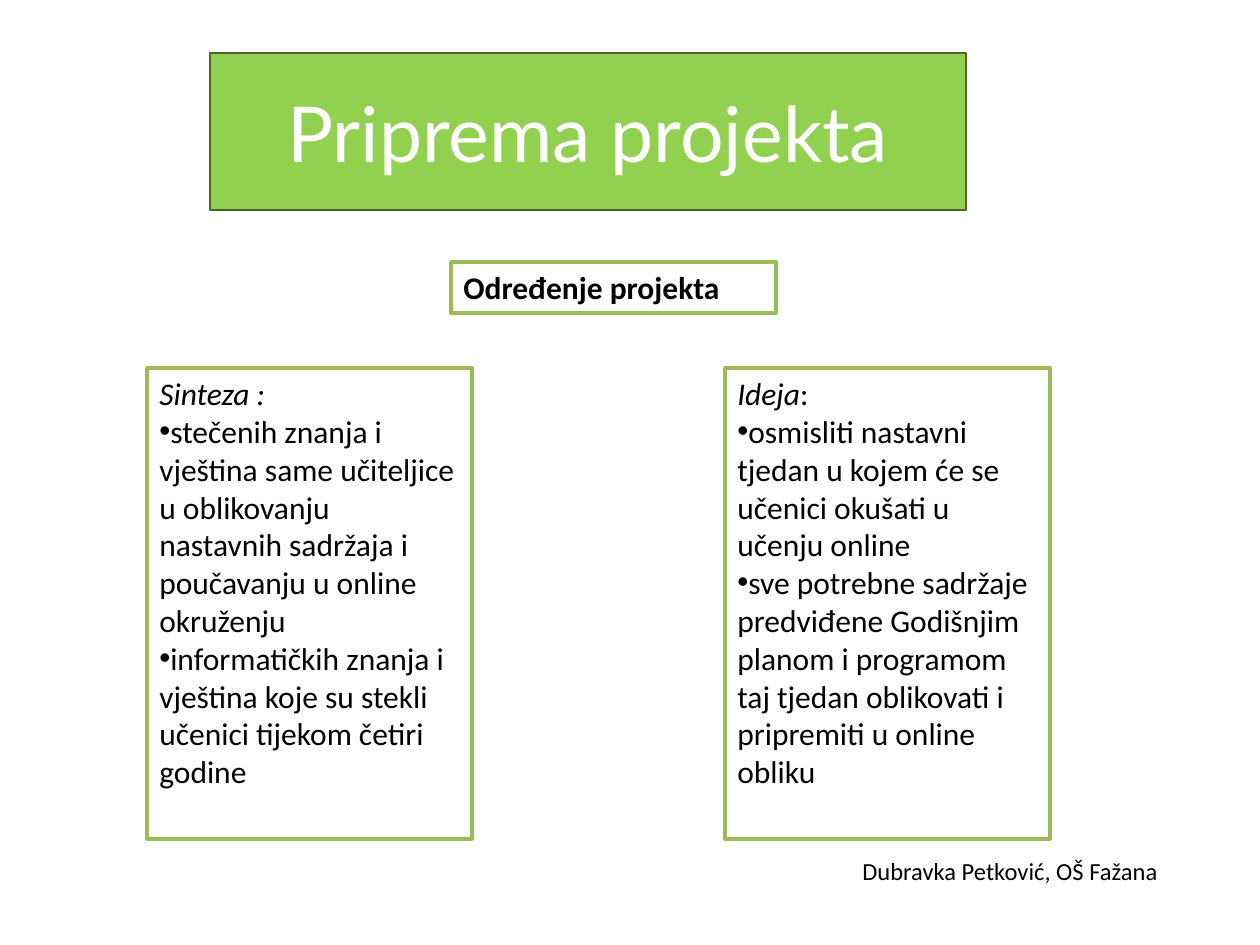
from lxml import etree
from pptx import Presentation, util as u
from pptx.dml.color import RGBColor
from pptx.enum import shapes, text
from pptx.oxml.ns import qn

# Content: paragraphs are (runs, bulleted); runs are (wording, italic)
TITLE = "Priprema projekta"
TOPIC = "Određenje projekta"
AUTHOR = "Dubravka Petković, OŠ Fažana"
COLUMNS = [
    [
        ([("Sinteza :", True)], False),
        ([("stečenih znanja i vještina same učiteljice u oblikovanju nastavnih "
           "sadržaja i poučavanju u online okruženju", False)], True),
        ([("informatičkih znanja i vještina koje su stekli učenici tijekom "
           "četiri godine", False)], True),
    ],
    [
        ([("Ideja", True), (":", False)], False),
        ([("osmisliti nastavni tjedan u kojem će se učenici okušati u učenju "
           "online", False)], True),
        ([("sve potrebne sadržaje predviđene Godišnjim planom i programom taj "
           "tjedan oblikovati i pripremiti u online obliku", False)], True),
    ],
]

COLORS = {"white": "FFFFFF", "black": "000000", "title": "92D050",
          "title_line": "4F6228", "box_line": "9BBB59"}
EMU_PER_PX = u.Inches(1) / 126
BOX_WIDTH = 325
COLUMN_LEFT, COLUMN_STEP, COLUMN_TOP, COLUMN_HEIGHT = 147, 578, 368, 471


def px(*lengths):
    return [u.Emu(round(length * EMU_PER_PX)) for length in lengths]


def color(name):
    return RGBColor.from_string(COLORS[name])


def add_box(slide, kind, place, fill, line, width):
    shape = slide.shapes.add_shape(kind, *px(*place))
    shape.shadow.inherit = False
    shape.fill.solid()
    shape.fill.fore_color.rgb = color(fill)
    shape.line.color.rgb = color(line)
    shape.line.width = u.Pt(width)
    shape.text_frame.word_wrap = True
    return shape


def add_bullet(paragraph):
    properties = paragraph._p.get_or_add_pPr()
    etree.SubElement(properties, qn("a:buFont"), typeface="Arial")
    etree.SubElement(properties, qn("a:buChar"), char="•")


def write(frame, paragraphs, size, font="Calibri", ink="black", bold=False,
          align=text.PP_ALIGN.LEFT, anchor=text.MSO_ANCHOR.TOP):
    frame.vertical_anchor = anchor
    for index, (runs, bulleted) in enumerate(paragraphs):
        paragraph = frame.add_paragraph() if index else frame.paragraphs[0]
        paragraph.alignment = align
        if bulleted:
            add_bullet(paragraph)
        paragraph.font.size = u.Pt(size)
        paragraph.font.name = font
        paragraph.font.bold = bold
        paragraph.font.color.rgb = color(ink)
        for wording, italic in runs:
            run = paragraph.add_run()
            run.text = wording
            if italic:
                run.font.italic = True


def single(wording):
    return [([(wording, False)], False)]


def main():
    presentation = Presentation()
    presentation.slide_width, presentation.slide_height = px(1260, 945)
    slide = presentation.slides.add_slide(presentation.slide_layouts[6])
    kinds = shapes.MSO_SHAPE

    # Author line
    author = slide.shapes.add_textbox(*px(850, 850, 388, 43))
    author.text_frame.word_wrap = True
    write(author.text_frame, single(AUTHOR), 14)

    # Title, with square corners
    title = add_box(slide, kinds.ROUNDED_RECTANGLE, (210, 53, 756, 157),
                    "title", "title_line", 0.75)
    title.adjustments[0] = 0
    write(title.text_frame, single(TITLE), 44, "Lato", "white",
          align=text.PP_ALIGN.CENTER, anchor=text.MSO_ANCHOR.MIDDLE)

    # Topic
    topic = add_box(slide, kinds.RECTANGLE, (451, 262, BOX_WIDTH, 51),
                    "white", "box_line", 2)
    write(topic.text_frame, single(TOPIC), 18, bold=True)

    # Two columns
    for index, paragraphs in enumerate(COLUMNS):
        left = COLUMN_LEFT + index * COLUMN_STEP
        column = add_box(slide, kinds.RECTANGLE,
                         (left, COLUMN_TOP, BOX_WIDTH, COLUMN_HEIGHT),
                         "white", "box_line", 2)
        write(column.text_frame, paragraphs, 18)

    presentation.save("out.pptx")


if __name__ == "__main__":
    main()
